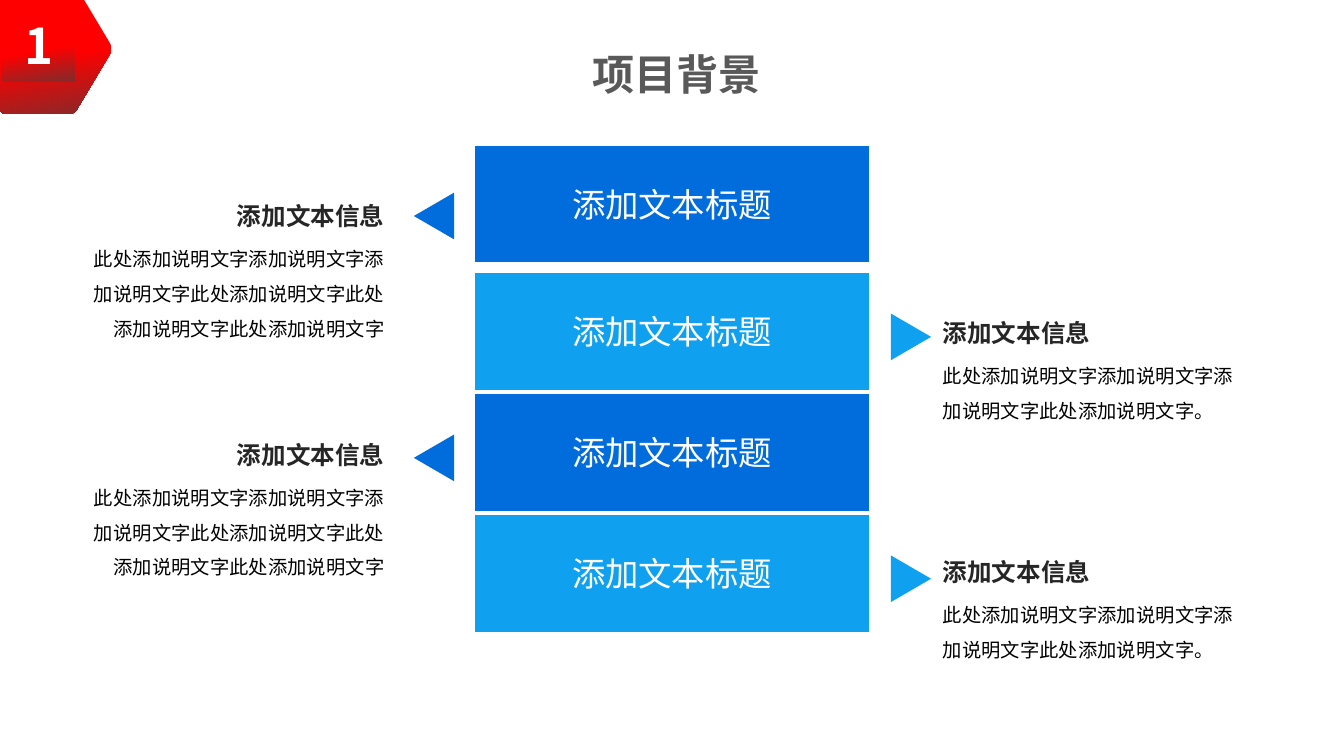
from pptx import Presentation
from pptx.dml.color import RGBColor
from pptx.enum import shapes, text
from pptx.oxml.ns import qn
from pptx.util import Cm, Pt

FONT = "Noto Sans CJK SC"
WHITE = RGBColor(0xFF, 0xFF, 0xFF)
BLACK = RGBColor(0x00, 0x00, 0x00)
HEADING = RGBColor(0x26, 0x26, 0x26)
TITLE = RGBColor(0x59, 0x59, 0x59)
DARK_BLUE = RGBColor(0x01, 0x6D, 0xDC)
LIGHT_BLUE = RGBColor(0x0F, 0xA1, 0xF0)
RED = RGBColor(0xFF, 0x00, 0x00)
MAROON = RGBColor(0x83, 0x2B, 0x2B)

LEFT_NOTE = "此处添加说明文字添加说明文字添加说明文字此处添加说明文字此处添加说明文字此处添加说明文字"
RIGHT_NOTE = "此处添加说明文字添加说明文字添加说明文字此处添加说明文字。"

BAR_WIDTH, BAR_HEIGHT = 8.0, 2.41
ROW_STEP = 2.43
ARROW_WIDTH, ARROW_HEIGHT = 0.94, 0.81


def format_text(paragraph, size, color, bold=False, align=text.PP_ALIGN.CENTER):
    paragraph.alignment = align
    for run in paragraph.runs:
        run.font.name = FONT
        run.font.size = Pt(size)
        run.font.bold = bold
        run.font.color.rgb = color
        # East Asian typeface
        latin = run.font._element.find(qn("a:latin"))
        east_asian = latin.makeelement(qn("a:ea"), {"typeface": FONT})
        latin.addnext(east_asian)


def paint_gradient(shape):
    shape.shadow.inherit = False
    shape.line.fill.background()
    shape.fill.gradient()
    shape.fill.gradient_angle = 280
    stops = shape.fill.gradient_stops
    for stop, position, color in zip(stops, (0.57, 1), (RED, MAROON)):
        stop.position = position
        stop.color.rgb = color


def add_plain_shape(slide, kind, left, top, width, height, color):
    shape = slide.shapes.add_shape(kind, Cm(left), Cm(top), Cm(width), Cm(height))
    shape.shadow.inherit = False
    shape.fill.solid()
    shape.fill.fore_color.rgb = color
    shape.line.fill.background()
    return shape


def add_title(slide, left, top, width, height):
    title = slide.shapes.title
    title.left, title.top, title.width, title.height = Cm(left), Cm(top), Cm(width), Cm(height)
    frame = title.text_frame
    frame.text = "项目背景"
    frame.auto_size = text.MSO_AUTO_SIZE.NONE
    frame.vertical_anchor = text.MSO_ANCHOR.MIDDLE
    frame.margin_left = frame.margin_right = frame.margin_top = frame.margin_bottom = 0
    format_text(frame.paragraphs[0], 24, TITLE, bold=True)


def add_badge(slide, left, top, width, height):
    # Hexagon with slightly bevelled corners, as fractions of the box
    outline = [(0.27, 0), (0.73, 0), (0.76, 0.03), (0.99, 0.47), (0.99, 0.53),
               (0.76, 0.97), (0.73, 1), (0.27, 1), (0.24, 0.97),
               (0, 0.53), (0, 0.47), (0.24, 0.03)]
    points = [(Cm(left + x * width), Cm(top + y * height)) for x, y in outline]
    builder = slide.shapes.build_freeform(*points[0])
    builder.add_line_segments(points[1:], close=True)
    paint_gradient(builder.convert_to_shape())

    # Number square
    number = slide.shapes.add_shape(shapes.MSO_SHAPE.RECTANGLE, Cm(left + 0.79),
                                    Cm(top + 0.51), Cm(1.45), Cm(1.45))
    paint_gradient(number)
    number.text_frame.text = "1"
    number.text_frame.vertical_anchor = text.MSO_ANCHOR.MIDDLE
    format_text(number.text_frame.paragraphs[0], 28, WHITE, bold=True)


def add_bar(slide, left, top, color):
    bar = add_plain_shape(slide, shapes.MSO_SHAPE.RECTANGLE, left, top,
                          BAR_WIDTH, BAR_HEIGHT, color)
    bar.line.color.rgb = WHITE
    bar.line.width = Pt(2)
    bar.text_frame.text = "添加文本标题"
    bar.text_frame.vertical_anchor = text.MSO_ANCHOR.MIDDLE
    format_text(bar.text_frame.paragraphs[0], 19, WHITE)


def add_arrow(slide, center_x, center_y, rotation, color):
    arrow = add_plain_shape(slide, shapes.MSO_SHAPE.ISOSCELES_TRIANGLE,
                            center_x - ARROW_WIDTH / 2, center_y - ARROW_HEIGHT / 2,
                            ARROW_WIDTH, ARROW_HEIGHT, color)
    arrow.rotation = rotation


def add_note(slide, left, top, width, height, note, align):
    box = slide.shapes.add_textbox(Cm(left), Cm(top), Cm(width), Cm(height))
    frame = box.text_frame
    frame.word_wrap = True
    frame.text = "添加文本信息"
    format_text(frame.paragraphs[0], 14, HEADING, bold=True, align=align)
    body = frame.add_paragraph()
    body.text = note
    body.line_spacing = 1.5
    body.space_before = Pt(3)
    format_text(body, 11, BLACK, align=align)


def add_diagram(slide, left, top):
    # Rows alternate between a left and a right note
    for row in range(4):
        pair, on_right = divmod(row, 2)
        color = LIGHT_BLUE if on_right else DARK_BLUE
        # The first bar stands slightly apart from the others
        bar_top = top + row * ROW_STEP + (0.13 if row else 0)
        arrow_y = top + 1.44 + row * ROW_STEP
        note_top = top + 1.01 + pair * 4.8 + on_right * 2.36
        add_bar(slide, left + 8.2, bar_top, color)
        if on_right:
            add_arrow(slide, left + 17, arrow_y, 90, color)
            add_note(slide, left + 17.39, note_top, 6.68, 3.02,
                     RIGHT_NOTE, text.PP_ALIGN.LEFT)
        else:
            add_arrow(slide, left + 7.42, arrow_y, 270, color)
            add_note(slide, left, note_top, 6.68, 3.02,
                     LEFT_NOTE, text.PP_ALIGN.RIGHT)


def main():
    presentation = Presentation()
    presentation.slide_width, presentation.slide_height = Cm(27), Cm(15.01)
    slide = presentation.slides.add_slide(presentation.slide_layouts[5])
    add_diagram(slide, 1.3, 2.9)
    add_badge(slide, -0.74, -0.33, 3, 2.62)
    add_title(slide, 10.8, 0.97, 5.59, 1.02)
    presentation.save("out.pptx")


if __name__ == "__main__":
    main()
